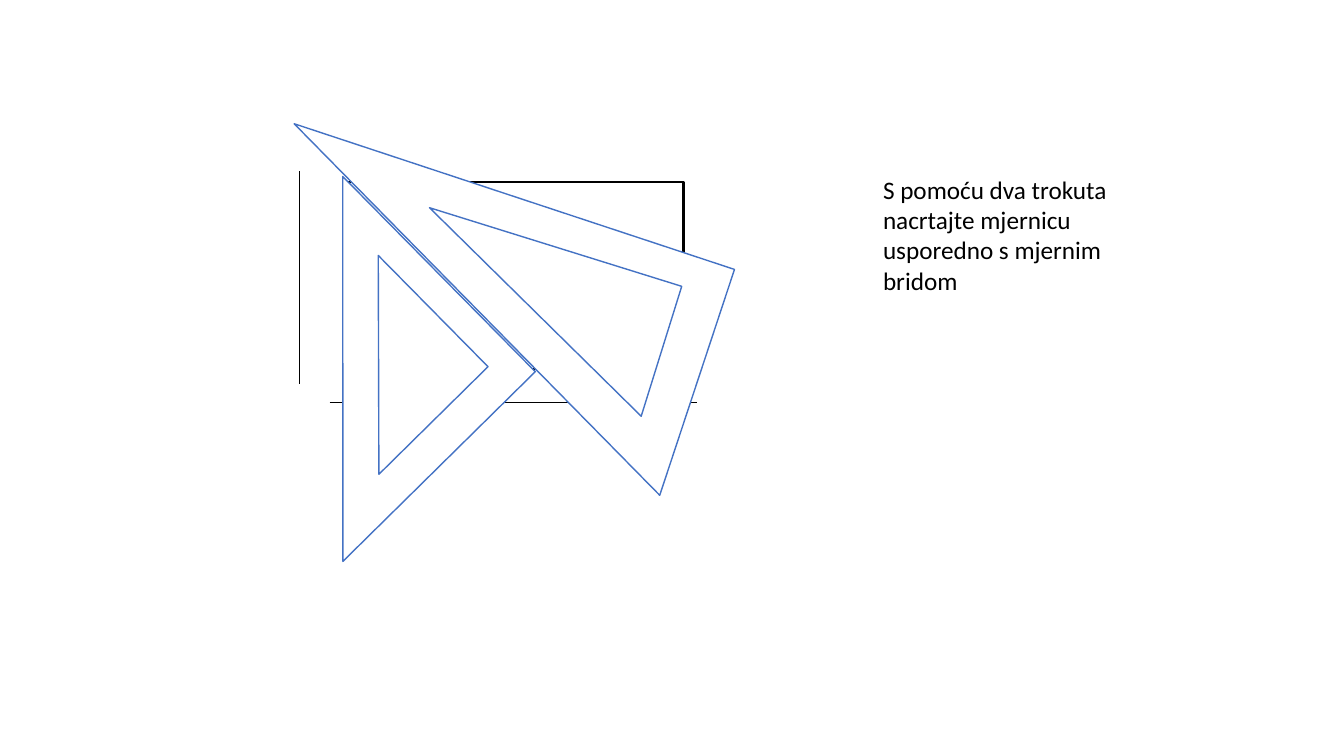
from pptx import Presentation
from pptx import util as u
from pptx.dml.color import RGBColor
from pptx.enum import shapes, text
from pptx.oxml.ns import qn
from lxml import etree

EMU_PER_PX = 9144  # 100 px to the inch
BLACK, WHITE, BLUE = "000000", "FFFFFF", "4472C4"


def px(*lengths):
    return [u.Emu(n * EMU_PER_PX) for n in lengths]


def color(target, value):
    target.rgb = RGBColor.from_string(value)


def outline(sp, value, width):
    color(sp.line.color, value)
    sp.line.width = u.Pt(width)


def add_outlined(parent, kind, box, line, width, fill=None, rotation=0):
    sp = parent.add_shape(kind, *px(*box))
    sp.shadow.inherit = False
    sp.rotation = rotation
    if fill:
        sp.fill.solid()
        color(sp.fill.fore_color, fill)
    else:
        sp.fill.background()
    outline(sp, line, width)


def add_line(parent, *ends):
    sp = parent.add_connector(shapes.MSO_CONNECTOR.STRAIGHT, *px(*ends))
    outline(sp, BLACK, 0.75)
    etree.SubElement(sp._element.spPr, qn("a:effectLst"))


def add_set_square(parent, *triangles):
    """Group the outer and inner triangles, each a box and its rotation."""
    group = parent.add_group_shape()
    for box, rotation in triangles:
        add_outlined(group.shapes, shapes.MSO_SHAPE.RIGHT_TRIANGLE, box,
                     BLUE, 1, WHITE, rotation)


def add_text(parent, box, words):
    tf = parent.add_textbox(*px(*box)).text_frame
    for name, value in {"word_wrap": True,
                        "auto_size": text.MSO_AUTO_SIZE.SHAPE_TO_FIT_TEXT}.items():
        setattr(tf, name, value)
    r = tf.paragraphs[0].add_run()
    r.text = words
    for name, value in {"name": "Calibri", "size": u.Pt(18)}.items():
        setattr(r.font, name, value)
    color(r.font.color, BLACK)


def main():
    prs = Presentation()
    prs.slide_width, prs.slide_height = px(1333, 750)
    parent = prs.slides.add_slide(prs.slide_layouts[6]).shapes

    add_outlined(parent, shapes.MSO_SHAPE.RECTANGLE, (340, 181, 338, 185), BLACK, 1.5)
    add_line(parent, 327, 399, 691, 399)
    add_line(parent, 297, 170, 297, 381)
    add_set_square(parent, ((243, 189, 460, 236), 198.3), ((400, 242, 262, 135), 197.3))
    add_set_square(parent, ((204, 232, 272, 268), 225.4), ((298, 286, 155, 152), 225.4))
    add_text(parent, (866, 168, 273, 131),
             "S pomoću dva trokuta nacrtajte mjernicu usporedno s mjernim bridom")

    prs.save("out.pptx")


if __name__ == "__main__":
    main()
